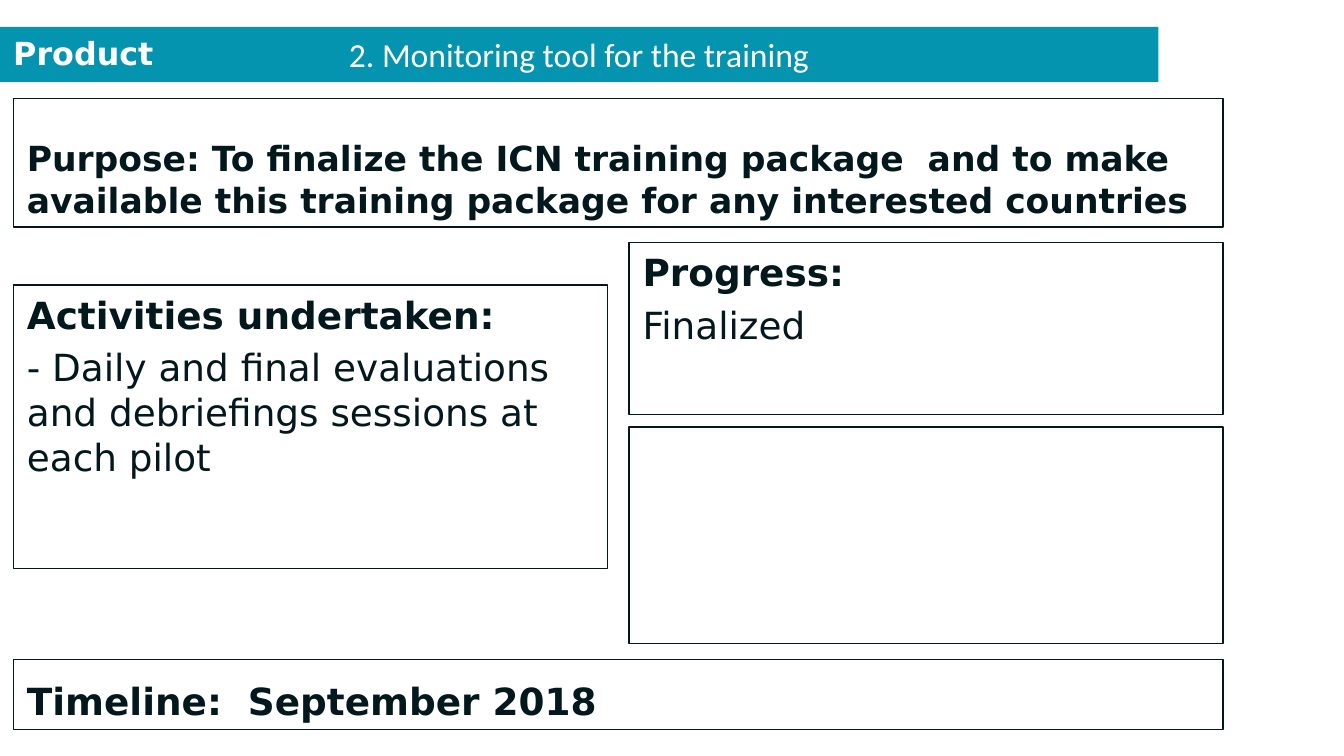
from lxml.etree import SubElement
from pptx import Presentation
from pptx.dml.color import RGBColor
from pptx.enum.shapes import MSO_SHAPE
from pptx.enum.text import MSO_ANCHOR, MSO_AUTO_SIZE, PP_ALIGN
from pptx.oxml.ns import qn
from pptx.util import Pt

TEAL, INK, WHITE = "0594AF", "03181C", "FFFFFF"
BODY_FONT, TITLE_FONT = "DejaVu Sans", "Calibri"
LEFT, GAP, WIDE = 7.2, 11.6, 648
COLUMN = (WIDE - GAP) / 2
RIGHT = LEFT + COLUMN + GAP


def color(value):
    return RGBColor.from_string(value)


def place(shape, left, top, width, height):
    bounds = {"left": left, "top": top, "width": width, "height": height}
    for name, value in bounds.items():
        setattr(shape, name, Pt(value))


def outline(shape):
    shape.fill.background()
    shape.line.color.rgb = color(INK)
    shape.line.width = Pt(0.75)


def set_frame(shape, anchor):
    settings = {"word_wrap": True, "auto_size": MSO_AUTO_SIZE.NONE,
                "vertical_anchor": anchor}
    for name, value in settings.items():
        setattr(shape.text_frame, name, value)


def write(para, text, size, ink=INK, bold=True, name=BODY_FONT):
    span = para.add_run()
    span.text = text
    settings = {"size": Pt(size), "bold": bold, "name": name}
    for key, value in settings.items():
        setattr(span.font, key, value)
    span.font.color.rgb = color(ink)


def remove_bullet(para):
    properties = para._p.get_or_add_pPr()
    properties.set("marL", "0")
    properties.set("indent", "0")
    SubElement(properties, qn("a:buNone"))


def add_title_bar(page):
    bar = page.shapes.title
    place(bar, 0, 14.4, 620.6, 29.5)
    bar.fill.solid()
    bar.fill.fore_color.rgb = color(TEAL)
    set_frame(bar, MSO_ANCHOR.MIDDLE)
    para = bar.text_frame.paragraphs[0]
    para.alignment = PP_ALIGN.CENTER
    write(para, " 2. Monitoring tool for the training ", 18, WHITE, False, TITLE_FONT)


def add_label(page, text):
    box = page.shapes.add_textbox(0, Pt(14.4), Pt(671), Pt(27.4))
    set_frame(box, MSO_ANCHOR.TOP)
    write(box.text_frame.paragraphs[0], text, 17, WHITE)


def fill_panel(box, bounds, heading, detail=None, size=20, anchor=MSO_ANCHOR.TOP):
    """Turn a body placeholder into an outlined panel with a bold heading."""
    place(box, *bounds)
    outline(box)
    set_frame(box, anchor)
    para = box.text_frame.paragraphs[0]
    para.alignment = PP_ALIGN.LEFT
    remove_bullet(para)
    write(para, heading, size)
    if detail:
        para = box.text_frame.add_paragraph()
        para.alignment = PP_ALIGN.LEFT
        remove_bullet(para)
        write(para, detail, size, bold=False)


def add_empty_panel(page, bounds):
    panel = page.shapes.add_shape(MSO_SHAPE.RECTANGLE, *map(Pt, bounds))
    panel.shadow.inherit = False
    outline(panel)


def main():
    deck = Presentation()
    deck.slide_width, deck.slide_height = Pt(720), Pt(405)
    page = deck.slides.add_slide(deck.slide_layouts.get_by_name("Comparison"))
    _, purpose, activities, progress, timeline = page.placeholders

    add_title_bar(page)
    add_label(page, "Product")
    fill_panel(purpose, (LEFT, 52.6, WIDE, 69),
               "Purpose: To finalize the ICN training package  and to make "
               "available this training package for any interested countries",
               size=18.5, anchor=MSO_ANCHOR.BOTTOM)
    fill_panel(activities, (LEFT, 152.7, COLUMN, 152), "Activities undertaken:",
               "- Daily and final evaluations and debriefings sessions at each pilot")
    fill_panel(progress, (RIGHT, 130, COLUMN, 92), "Progress:", "Finalized")
    add_empty_panel(page, (RIGHT, 228.7, COLUMN, 116))
    fill_panel(timeline, (LEFT, 353.3, WIDE, 37.4), "Timeline:  September 2018",
               anchor=MSO_ANCHOR.BOTTOM)
    deck.save("out.pptx")


if __name__ == "__main__":
    main()
